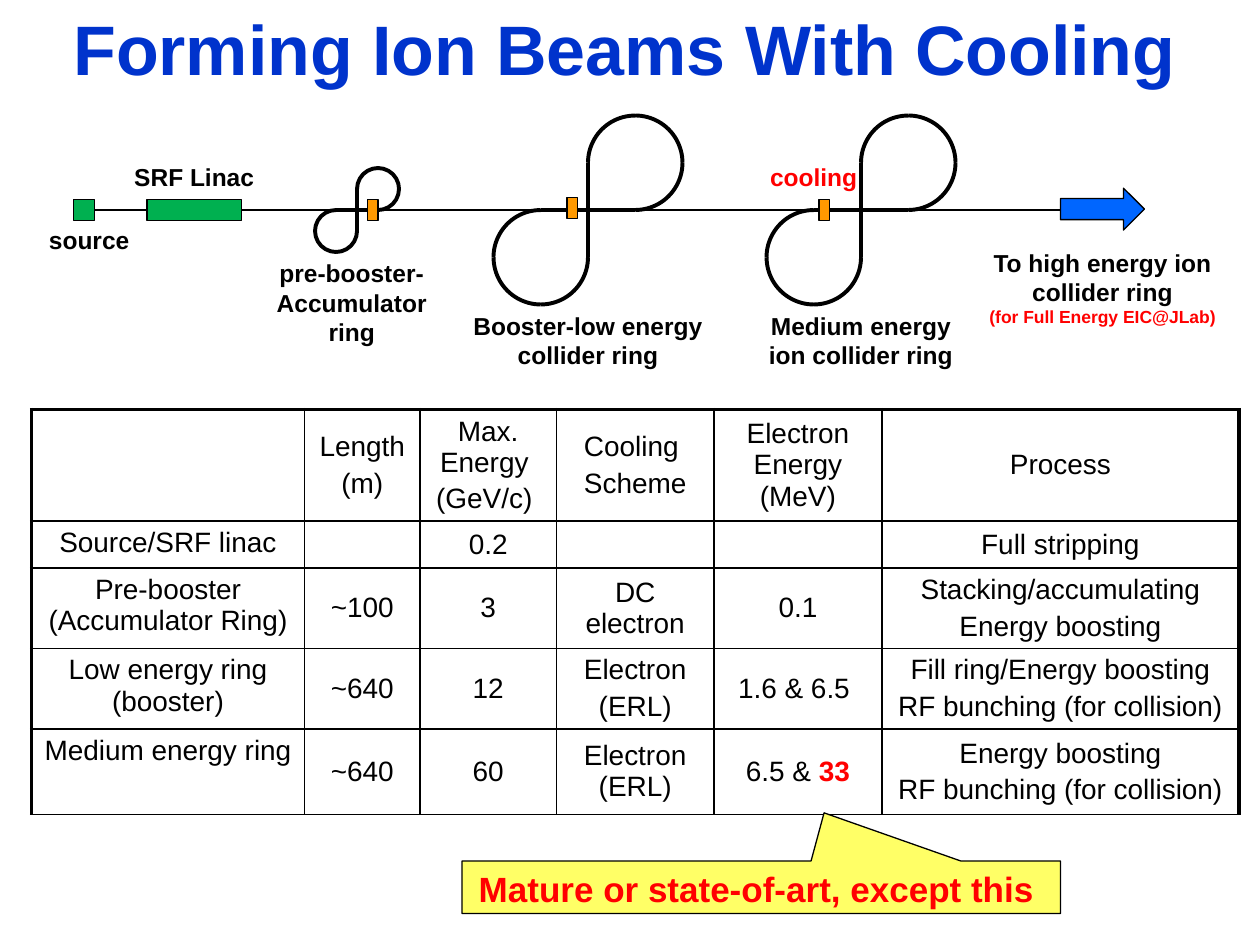
from lxml.etree import SubElement
from pptx import Presentation
from pptx.dml.color import RGBColor
from pptx.enum.shapes import MSO_CONNECTOR, MSO_SHAPE
from pptx.enum.text import MSO_ANCHOR, MSO_AUTO_SIZE, PP_ALIGN
from pptx.oxml.ns import qn
from pptx.util import Pt

COLORS = {
    "black": "000000", "red": "FF0000", "title": "0033CC", "green": "00B050",
    "orange": "FF9900", "blue": "0066FF", "yellow": "FFFF66",
}


def rgb(name):
    return RGBColor.from_string(COLORS[name])


class Deck:
    font = "Arial"
    thin, ring_width = 0.75, 2.25
    inner_border, outer_border = 1, 2.25

    def __init__(self, width, height):
        self.prs = Presentation()
        self.prs.slide_width, self.prs.slide_height = Pt(width), Pt(height)
        self.s = self.prs.slides.add_slide(self.prs.slide_layouts[6])

    def add_text(self, tf, paragraphs, gap=0):
        for i, runs in enumerate(paragraphs):
            p = tf.add_paragraph() if i else tf.paragraphs[0]
            p.alignment = PP_ALIGN.CENTER
            if i and gap:
                p.space_before = Pt(gap)
            for text, size, color, bold in runs:
                r = p.add_run()
                r.text = text
                r.font.name, r.font.size, r.font.bold = self.font, Pt(size), bold
                r.font.color.rgb = rgb(color)

    def text(self, x, y, w, h, *paragraphs, grow=True):
        tf = self.s.shapes.add_textbox(Pt(x), Pt(y), Pt(w), Pt(h)).text_frame
        tf.word_wrap = True
        tf.auto_size = MSO_AUTO_SIZE.SHAPE_TO_FIT_TEXT if grow else MSO_AUTO_SIZE.NONE
        tf.vertical_anchor = MSO_ANCHOR.TOP if grow else MSO_ANCHOR.MIDDLE
        self.add_text(tf, [[p] for p in paragraphs])

    def label(self, x, y, w, h, text, color="black"):
        self.text(x, y, w, h, (text, 14, color, True))

    def shape(self, kind, x, y, w, h, fill=None, width=thin):
        sp = self.s.shapes.add_shape(kind, Pt(x), Pt(y), Pt(w), Pt(h))
        sp.shadow.inherit = False
        if fill:
            sp.fill.solid()
            sp.fill.fore_color.rgb = rgb(fill)
        else:
            sp.fill.background()
        sp.line.color.rgb = rgb("black")
        sp.line.width = Pt(width)
        return sp

    def line(self, x1, y1, x2, y2, width=thin):
        c = self.s.shapes.add_connector(
            MSO_CONNECTOR.STRAIGHT, Pt(x1), Pt(y1), Pt(x2), Pt(y2))
        c.line.color.rgb = rgb("black")
        c.line.width = Pt(width)
        SubElement(c._element.spPr, qn("a:effectLst"))

    def figure_eight(self, x, y, d):
        w = self.ring_width
        self.line(x, y - d / 2, x, y + d / 2, w)
        for left, top, turns in ((x, y - d, (0, 270, 90)), (x - d, y, (180, 90, 270))):
            for turn in turns:
                self.shape(MSO_SHAPE.ARC, left, top, d, d, width=w).rotation = turn
        self.line(x + d / 2, y, x - d / 2, y, w)

    def callout(self, x, y, w, h, tip, text):
        sp = self.shape(MSO_SHAPE.RECTANGULAR_CALLOUT, x, y, w, h, "yellow")
        sp.adjustments[0], sp.adjustments[1] = tip
        sp.text_frame.word_wrap = True
        sp.text_frame.vertical_anchor = MSO_ANCHOR.TOP
        self.add_text(sp.text_frame, [[(text, 20, "red", True)]])

    def border(self, cell, tag, width):
        ln = SubElement(cell._tc.get_or_add_tcPr(), qn("a:" + tag), w=str(Pt(width)))
        fill = SubElement(ln, qn("a:solidFill"))
        SubElement(fill, qn("a:srgbClr"), val=COLORS["black"])

    def table(self, x, y, widths, heights, rows):
        size = 16
        table = self.s.shapes.add_table(
            len(rows), len(widths), Pt(x), Pt(y), Pt(sum(widths)), Pt(sum(heights))).table
        table.first_row = table.horz_banding = False
        for column, w in zip(table.columns, widths):
            column.width = Pt(w)
        for row, h in zip(table.rows, heights):
            row.height = Pt(h)
        for i, row in enumerate(rows):
            for j, paragraphs in enumerate(row):
                cell = table.cell(i, j)
                outer = {"lnL": j == 0, "lnR": j == len(widths) - 1,
                         "lnT": i == 0, "lnB": False}
                for tag, thick in outer.items():
                    self.border(cell, tag, self.outer_border if thick else self.inner_border)
                cell.fill.background()
                cell.vertical_anchor = MSO_ANCHOR.MIDDLE if j else MSO_ANCHOR.TOP
                styled = [
                    [(t, size, "red" if k else "black", k > 0)
                     for k, t in enumerate(p if isinstance(p, tuple) else (p,))]
                    for p in paragraphs]
                self.add_text(cell.text_frame, styled, gap=3.2)
                if not paragraphs:
                    end = cell.text_frame.paragraphs[0]._p.get_or_add_endParaRPr()
                    end.set("sz", str(size * 100))


def main():
    deck = Deck(720, 540)
    axis = 120

    deck.text(0, 0, 714, 54, ("Forming Ion Beams With Cooling", 40, "title", True), grow=False)

    deck.table(18, 234, [156, 66, 78, 90, 96, 204], [63.5, 25, 45.8, 45.8, 49], [
        [[], ["Length ", "(m)"], ["Max. Energy ", "(GeV/c) "], ["Cooling ", "Scheme"],
         ["Electron Energy (MeV)"], ["Process"]],
        [["Source/SRF linac"], [], ["0.2"], [], [], ["Full stripping"]],
        [["Pre-booster (Accumulator Ring)"], ["~100"], ["3"], ["DC electron"], ["0.1"],
         ["Stacking/accumulating", "Energy boosting"]],
        [["Low energy ring (booster)"], ["~640"], ["12"], ["Electron", "(ERL)"],
         ["1.6 & 6.5 "], ["Fill ring/Energy boosting", "RF bunching (for collision)"]],
        [["Medium energy ring"], ["~640"], ["60"], ["Electron (ERL)"],
         [("6.5 & ", "33")], ["Energy boosting", "RF bunching (for collision)"]],
    ])

    deck.line(42, axis, 618, axis)
    for x, w in ((42, 12), (84, 54)):
        deck.shape(MSO_SHAPE.RECTANGLE, x, axis - 6, w, 12, "green")
    for x, d in ((204, 24), (336, 54), (492, 54)):
        deck.figure_eight(x, axis, d)
    deck.shape(MSO_SHAPE.RIGHT_ARROW, 606, 107.5, 48, 24, "blue")

    deck.label(18, 125, 66, 24.5, "source")
    deck.label(66, 89, 90, 24.5, "SRF Linac")
    deck.label(150, 144, 102, 58, "pre-booster-Accumulator ring")
    deck.label(258, 174, 156, 41, "Booster-low energy collider ring")
    deck.label(426, 174, 132, 41, "Medium energy ion collider ring")
    deck.text(558, 138, 144, 53,
              ("To high energy ion collider ring", 14, "black", True),
              ("(for Full Energy EIC@JLab)", 10, "red", True))
    deck.label(432, 89, 66, 24.5, "cooling", "red")
    for x, y in ((210, 114), (468, 114), (324, 113)):
        deck.shape(MSO_SHAPE.RECTANGLE, x, y, 6, 12, "orange")

    deck.callout(264, 492, 342, 30, (0.105, -1.417), "Mature or state-of-art, except this ")
    deck.prs.save("out.pptx")


if __name__ == "__main__":
    main()
